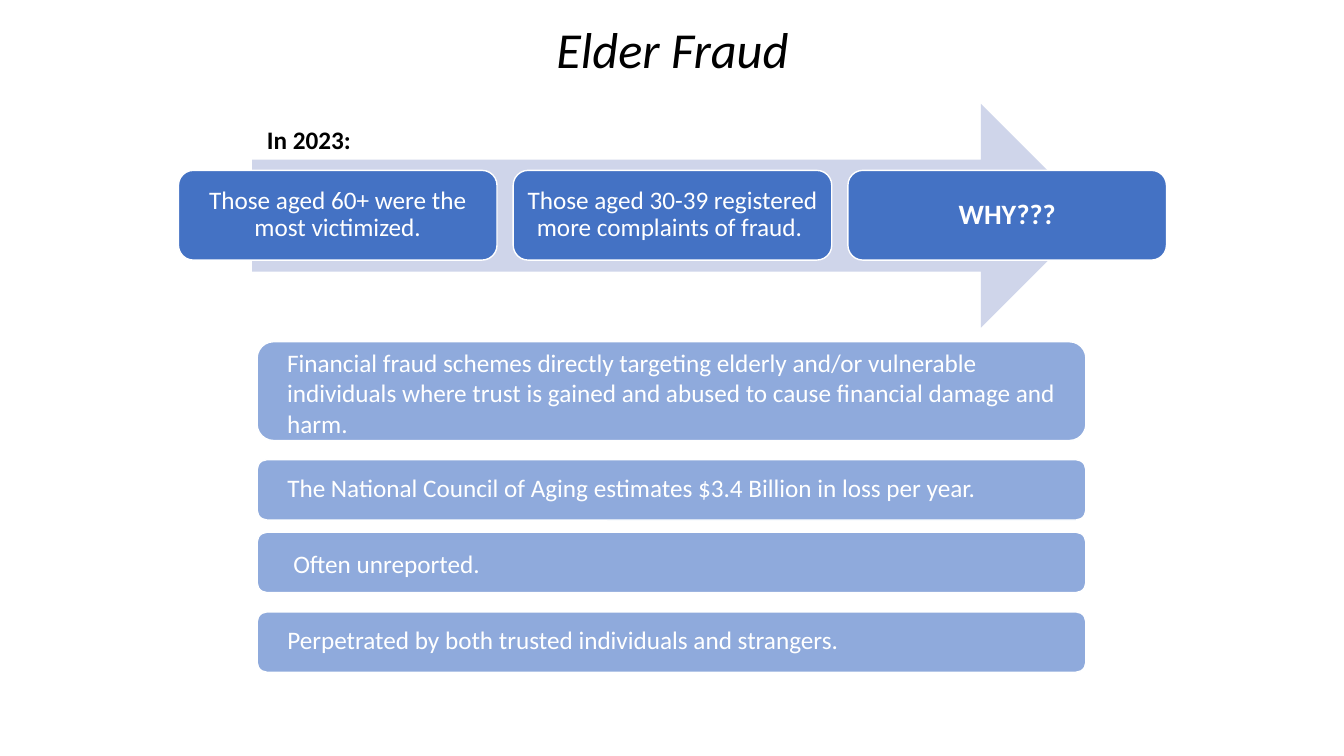
from pptx import Presentation
from pptx.dml.color import RGBColor
from pptx.enum.shapes import MSO_SHAPE as Shape
from pptx.enum.text import MSO_ANCHOR as Anchor, PP_ALIGN as Align
from pptx.util import Pt

PX = 9144  # 100 px to the inch
WHITE, BLACK = "FFFFFF", "000000"
ARROW, CARD, BAR = "CFD5EA", "4472C4", "8FAADC"


def color(value):
    return RGBColor.from_string(value)


def emu(box):
    return [length * PX for length in box]


def add_block(page, kind, box, fill, line=None):
    block = page.shapes.add_shape(kind, *emu(box))
    block.shadow.inherit = False
    block.fill.solid()
    block.fill.fore_color.rgb = color(fill)
    if line:
        block.line.color.rgb = color(line)
        block.line.width = Pt(1)
    else:
        block.line.fill.background()
    return block


def write(shape, text, size=18, ink=WHITE, align=Align.LEFT, anchor=Anchor.TOP,
          insets=(10, 5, 10, 5), spacing=1.0, bold=False, italic=False, wrap=True):
    frame = shape.text_frame
    frame.text = text
    frame.word_wrap = wrap
    frame.vertical_anchor = anchor
    (frame.margin_left, frame.margin_top,
     frame.margin_right, frame.margin_bottom) = emu(insets)
    para = frame.paragraphs[0]
    para.alignment = align
    para.line_spacing = spacing
    font = para.runs[0].font
    font.name, font.size = "Calibri", Pt(size)
    font.bold, font.italic = bold, italic
    font.color.rgb = color(ink)


def add_title(page, box):
    write(page.shapes.add_textbox(*emu(box)), "Elder Fraud", 36, BLACK,
          Align.CENTER, Anchor.BOTTOM, spacing=0.9, italic=True)


def add_arrow_band(page, box):
    left, top, width, height = box
    add_block(page, Shape.RIGHT_ARROW, box, ARROW)

    # Three cards, centred on the arrow and wider than it
    cards = [("Those aged 60+ were the most victimized.", 18, False),
             ("Those aged 30-39 registered more complaints of fraud. ", 18, False),
             ("WHY???", 20, True)]
    card_width, card_height, gap = 316, 89, 16
    row_width = len(cards) * (card_width + gap) - gap
    row_left = left + (width - row_width) // 2
    card_top = top + (height - card_height) // 2
    for index, (text, size, bold) in enumerate(cards):
        card_left = row_left + index * (card_width + gap)
        card = add_block(page, Shape.ROUNDED_RECTANGLE,
                         (card_left, card_top, card_width, card_height), CARD, WHITE)
        write(card, text, size, align=Align.CENTER, anchor=Anchor.MIDDLE,
              insets=(7, 7, 7, 7), spacing=0.9, bold=bold)

    # Year label above the shaft
    label = page.shapes.add_textbox(*emu((left + 5, top + 15, 104, 40)))
    write(label, "In 2023:", ink=BLACK, bold=True, wrap=False)


def add_facts(page, box):
    left, top, width, _ = box
    # Offset from the top, height, left and top insets, text
    facts = [
        (0, 98, 25, 1, "Financial fraud schemes directly targeting elderly and/or "
         "vulnerable individuals where trust is gained and abused to cause "
         "financial damage and harm."),
        (117, 60, 27, 10, "The National Council of Aging estimates $3.4 Billion "
         "in loss per year."),
        (189, 60, 33, 13, "Often unreported."),
        (268, 60, 27, 9, "Perpetrated by both trusted individuals and strangers."),
    ]
    for offset, height, inset_left, inset_top, text in facts:
        bar = add_block(page, Shape.ROUNDED_RECTANGLE,
                        (left, top + offset, width, height), BAR, WHITE)
        write(bar, text, insets=(inset_left, inset_top, 4, 0))


def main():
    deck = Presentation()
    deck.slide_width, deck.slide_height = emu((1333, 750))
    page = deck.slides.add_slide(deck.slide_layouts[6])
    add_title(page, (483, 18, 368, 66))
    add_arrow_band(page, (250, 103, 834, 222))
    add_facts(page, (255, 339, 822, 328))
    deck.save("out.pptx")


if __name__ == "__main__":
    main()
